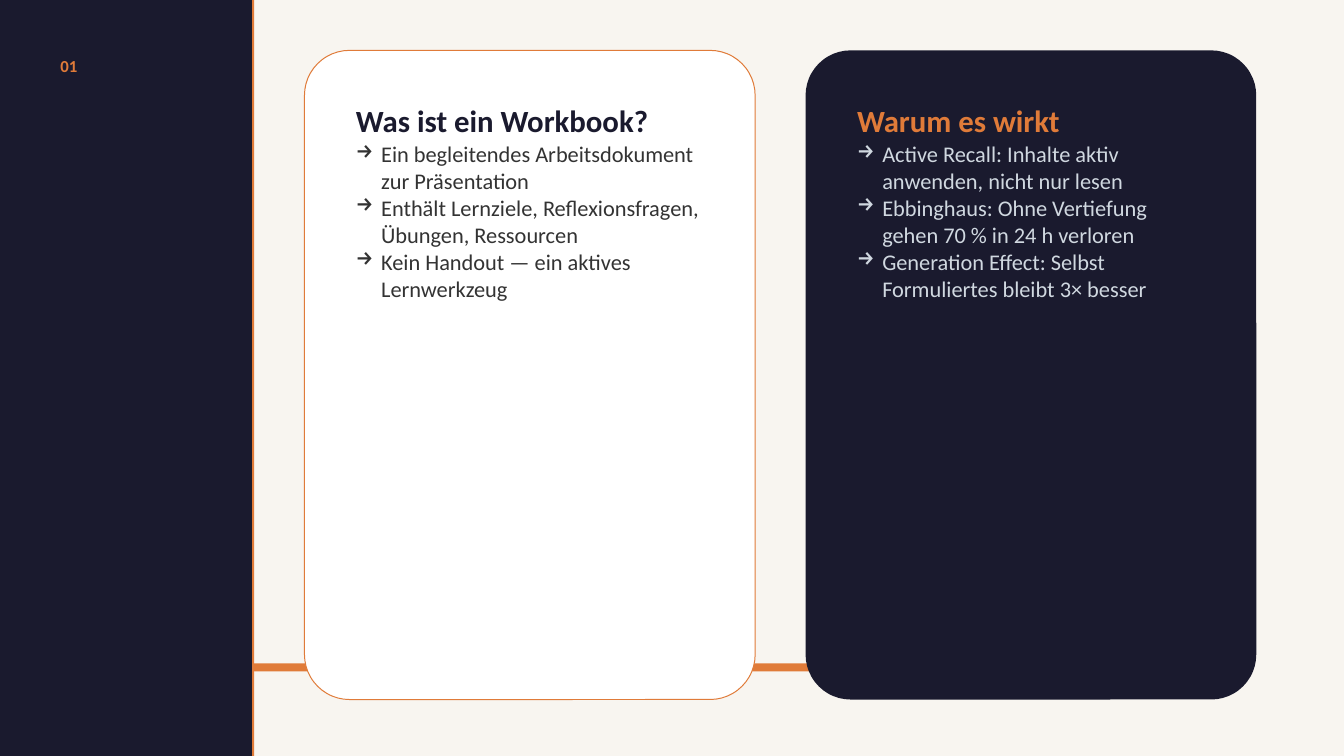
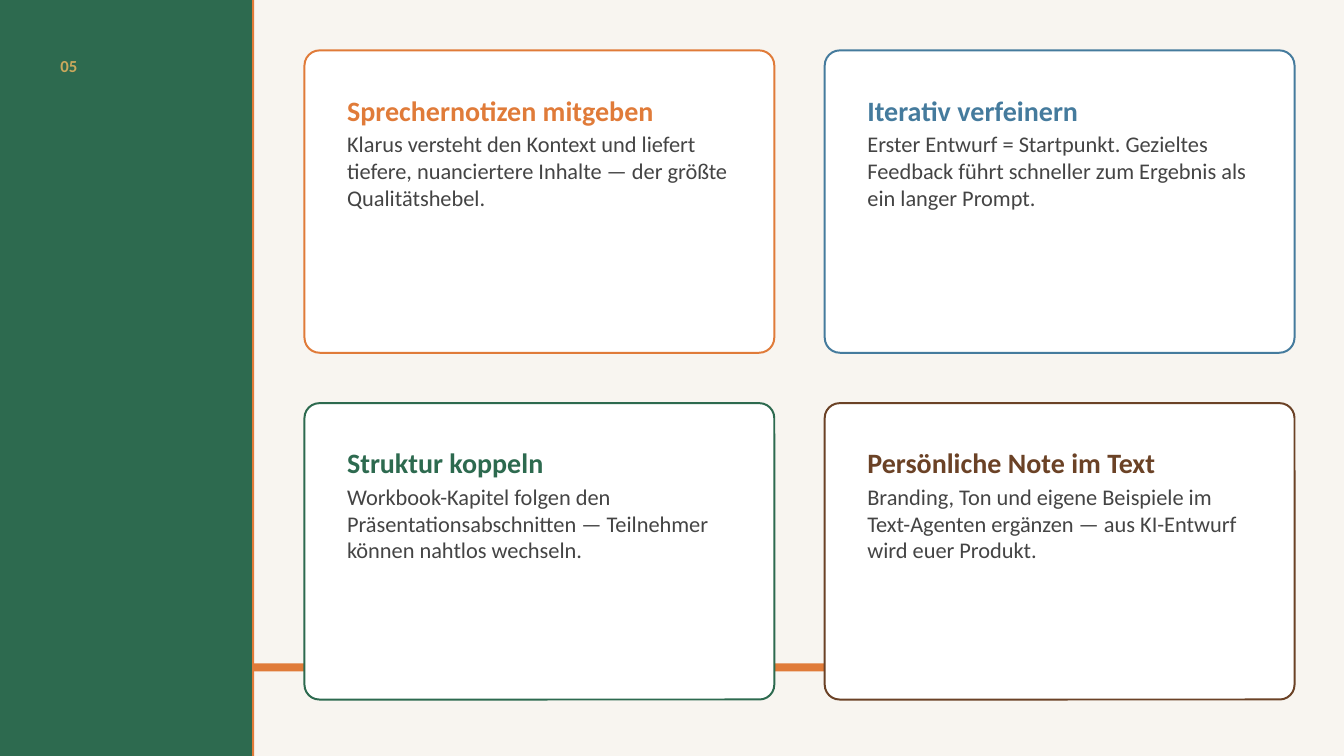
from pptx import Presentation
from pptx import util as u
from pptx.dml.color import RGBColor
from pptx.enum import shapes, text
from pptx.oxml import parse_xml
from pptx.oxml.ns import nsdecls

COLORS = {
    "cream": "F8F5F0",
    "white": "FFFFFF",
    "navy": "1A1A2E",
    "orange": "E07B39",
    "green": "2D6A4F",
    "gold": "C9A85C",
    "blue": "457B9D",
    "brown": "6B4226",
    "charcoal": "333333",
    "gray": "444444",
    "mist": "D0D8E0",
}
FONT = "Calibri"
SIDEBAR_WIDTH = 2.5
CARD_LEFT, CARD_TOP, CARD_GAP = 3.02, 0.5, 0.5
CARD_INSET = 0.38
BULLET_INDENT = 0.25


def color(name):
    return RGBColor.from_string(COLORS[name])


def write(paragraph, content, size, ink, bold=False, space_before=0, bullet=None):
    """Fill a paragraph with one formatted run, with an optional hanging bullet."""
    paragraph.alignment = text.PP_ALIGN.LEFT
    if space_before:
        paragraph.space_before = u.Pt(space_before)
    if bullet:
        properties = paragraph._p.get_or_add_pPr()
        indent = u.Inches(BULLET_INDENT)
        properties.set("marL", str(indent))
        properties.set("indent", str(-indent))
        properties.append(parse_xml(f'<a:buChar {nsdecls("a")} char="{bullet}"/>'))
    run = paragraph.add_run()
    run.text = content
    run.font.name = FONT
    run.font.size = u.Pt(size)
    run.font.bold = bold
    run.font.color.rgb = color(ink)


class Deck:
    """Holds the presentation, its shared style and the current slide."""

    def __init__(self):
        self.presentation = Presentation()
        self.presentation.slide_width = u.Inches(13.33)
        self.presentation.slide_height = u.Inches(7.5)
        fill = self.presentation.slide_master.background.fill
        fill.solid()
        fill.fore_color.rgb = color("cream")
        self.slide = None

    def add_slide(self, number, sidebar, number_ink):
        layout = self.presentation.slide_layouts[6]
        self.slide = self.presentation.slides.add_slide(layout)
        self.block(0, 6.58, 10, 0.08, "orange")
        self.block(0, 0, SIDEBAR_WIDTH, 7.5, sidebar)
        self.block(SIDEBAR_WIDTH, 0, 0.02, 7.5, "orange")
        box = self.slide.shapes.add_textbox(*map(u.Inches, (0.5, 0.5, 1.5, 0.44)))
        box.text_frame.word_wrap = True
        write(box.text_frame.paragraphs[0], number, 12, number_ink, bold=True)

    def block(self, left, top, width, height, fill, line=None, line_width=1, radius=None):
        """Draw a rectangle, rounded when a radius is given."""
        kind = shapes.MSO_SHAPE.RECTANGLE if radius is None else shapes.MSO_SHAPE.ROUNDED_RECTANGLE
        shape = self.slide.shapes.add_shape(kind, *map(u.Inches, (left, top, width, height)))
        shape.shadow.inherit = False
        if radius is not None:
            shape.adjustments[0] = radius
        shape.fill.solid()
        shape.fill.fore_color.rgb = color(fill)
        if line:
            shape.line.color.rgb = color(line)
            shape.line.width = u.Pt(line_width)
        else:
            shape.line.fill.background()
        return shape

    def card(self, left, top, width, height, title, body, title_size, title_ink,
             body_ink, title_gap, bullet=None, **style):
        shape = self.block(left, top, width, height, **style)
        frame = shape.text_frame
        frame.word_wrap = True
        frame.vertical_anchor = text.MSO_ANCHOR.TOP
        frame.margin_left = frame.margin_right = u.Inches(CARD_INSET)
        frame.margin_top = frame.margin_bottom = u.Inches(CARD_INSET)
        write(frame.paragraphs[0], title, title_size, title_ink, bold=True)
        for index, line in enumerate(body):
            write(frame.add_paragraph(), line, 16, body_ink, bullet=bullet,
                  space_before=0 if index else title_gap)


def build_workbook_slide(deck):
    deck.add_slide("01", "navy", "orange")
    width = 4.47
    cards = [
        ("Was ist ein Workbook?", "navy", "charcoal", "white", "orange", [
            "Ein begleitendes Arbeitsdokument zur Präsentation",
            "Enthält Lernziele, Reflexionsfragen, Übungen, Ressourcen",
            "Kein Handout — ein aktives Lernwerkzeug",
        ]),
        ("Warum es wirkt", "orange", "mist", "navy", None, [
            "Active Recall: Inhalte aktiv anwenden, nicht nur lesen",
            "Ebbinghaus: Ohne Vertiefung gehen 70 % in 24 h verloren",
            "Generation Effect: Selbst Formuliertes bleibt 3× besser",
        ]),
    ]
    for column, (title, title_ink, body_ink, fill, line, body) in enumerate(cards):
        deck.card(CARD_LEFT + column * (width + CARD_GAP), CARD_TOP, width, 6.44,
                  title, body, 22, title_ink, body_ink, 1.2, bullet="→",
                  fill=fill, line=line, line_width=0.72, radius=0.1)


def build_tips_slide(deck):
    deck.add_slide("05", "green", "gold")
    width, heights = 4.66, (3, 2.94)
    cards = [
        ("Sprechernotizen mitgeben", "orange",
         "Klarus versteht den Kontext und liefert tiefere, nuanciertere Inhalte"
         " — der größte Qualitätshebel."),
        ("Iterativ verfeinern", "blue",
         "Erster Entwurf = Startpunkt. Gezieltes Feedback führt schneller zum"
         " Ergebnis als ein langer Prompt."),
        ("Struktur koppeln", "green",
         "Workbook-Kapitel folgen den Präsentationsabschnitten — Teilnehmer"
         " können nahtlos wechseln."),
        ("Persönliche Note im Text", "brown",
         "Branding, Ton und eigene Beispiele im Text-Agenten ergänzen"
         " — aus KI-Entwurf wird euer Produkt."),
    ]
    for index, (title, accent, body) in enumerate(cards):
        row, column = divmod(index, 2)
        deck.card(CARD_LEFT + column * (width + CARD_GAP),
                  CARD_TOP + row * (heights[0] + CARD_GAP), width, heights[row],
                  title, [body], 20, accent, "gray", 2.4,
                  fill="white", line=accent, line_width=1.42, radius=0.05)


def main():
    deck = Deck()
    build_workbook_slide(deck)
    build_tips_slide(deck)
    deck.presentation.save("out.pptx")


if __name__ == "__main__":
    main()
